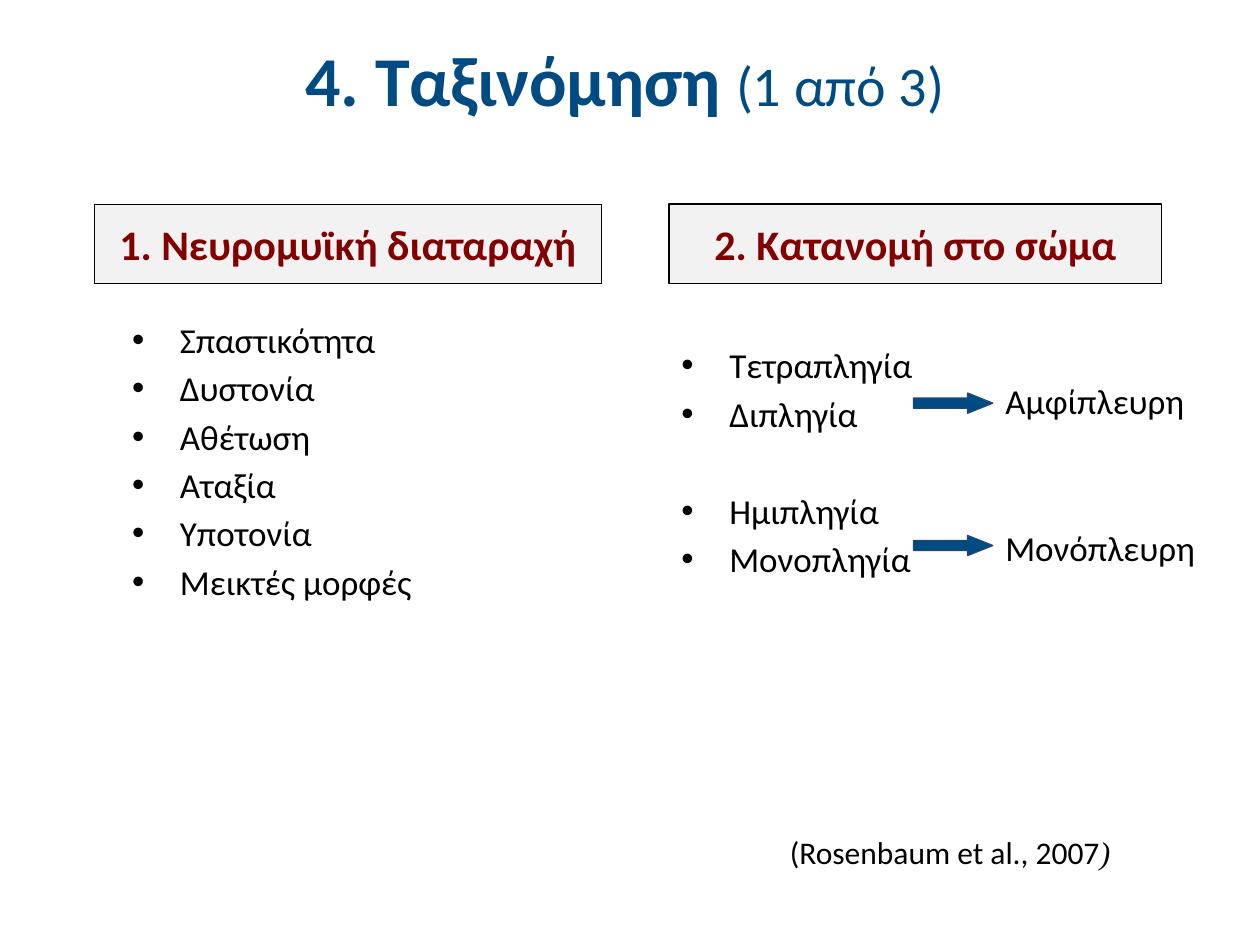
from lxml import etree
from pptx import Presentation
from pptx.dml.color import RGBColor
from pptx.enum.shapes import MSO_SHAPE
from pptx.enum.text import MSO_ANCHOR, MSO_AUTO_SIZE, PP_ALIGN
from pptx.oxml.ns import qn
from pptx.util import Inches, Pt

RECT, ARROW = MSO_SHAPE.RECTANGLE, MSO_SHAPE.RIGHT_ARROW
MIDDLE, CENTER = MSO_ANCHOR.MIDDLE, PP_ALIGN.CENTER
FIXED, GROW = MSO_AUTO_SIZE.NONE, MSO_AUTO_SIZE.SHAPE_TO_FIT_TEXT
TITLE_ONLY = 5
COLS, ROWS = 100, 75
NAVY, RED, BLACK, GREY, EDGE = "004B82", "820000", "000000", "F2F2F2", "1F497D"
LEAD = 3.6  # points before each list item
INDENT = Inches(0.38)


def color(text):
    return RGBColor.from_string(text)


class Deck:
    def __init__(self):
        self.face = "Calibri"
        self.prs = Presentation()
        self.prs.slide_width, self.prs.slide_height = Inches(10), Inches(7.5)
        self.slide = self.prs.slides.add_slide(self.prs.slide_layouts[TITLE_ONLY])

    def place(self, col, row, wide, high):
        """Turn grid columns and rows into slide lengths."""
        x, y = self.prs.slide_width / COLS, self.prs.slide_height / ROWS
        return [round(n) for n in (col * x, row * y, wide * x, high * y)]

    def style(self, font, size, ink=BLACK, bold=False):
        font.name, font.size, font.bold = self.face, Pt(size), bold
        font.color.rgb = color(ink)

    def title(self, grid, main, part):
        shape = self.slide.shapes.title
        shape.left, shape.top, shape.width, shape.height = self.place(*grid)
        frame = shape.text_frame
        frame.auto_size, frame.vertical_anchor = FIXED, MIDDLE
        para = frame.paragraphs[0]
        para.alignment = CENTER
        for text, size, bold in ((main, 40, True), (part, 32, False)):
            run = para.add_run()
            run.text = text
            self.style(run.font, size, NAVY, bold)

    def shape(self, kind, grid, fill, line, width):
        shape = self.slide.shapes.add_shape(kind, *self.place(*grid))
        shape.shadow.inherit = False
        shape.fill.solid()
        shape.fill.fore_color.rgb = color(fill)
        shape.line.color.rgb = color(line)
        shape.line.width = Pt(width)
        return shape

    def header(self, grid, text, width):
        frame = self.shape(RECT, grid, GREY, BLACK, width).text_frame
        frame.word_wrap, frame.vertical_anchor = False, MIDDLE
        para = frame.paragraphs[0]
        para.text, para.alignment = text, CENTER
        self.style(para.font, 24, RED, True)

    def arrow(self, col, row):
        arrow = self.shape(ARROW, (col, row, 6.3, 1.6), NAVY, EDGE, 0.75)
        arrow.adjustments[0], arrow.adjustments[1] = 0.5, 1.25

    def text(self, grid, items, size=20, wrap=True, fit=GROW):
        """Add a box of (text, points before) pairs; return its frame."""
        frame = self.slide.shapes.add_textbox(*self.place(*grid)).text_frame
        frame.word_wrap, frame.auto_size = wrap, fit
        for i, (text, gap) in enumerate(items):
            para = frame.add_paragraph() if i else frame.paragraphs[0]
            para.text, para.space_before = text, Pt(gap)
            self.style(para.font, size)
        return frame

    def bullets(self, grid, items):
        for para in self.text(grid, items, fit=FIXED).paragraphs:
            props = para._p.get_or_add_pPr()
            props.set("marL", str(INDENT))
            props.set("indent", str(-INDENT))
            mark = etree.Element(qn("a:buChar"), char="•")
            face = etree.Element(qn("a:buFont"), typeface="Arial")
            # Bullet parts stand before the default run style
            props.find(qn("a:defRPr")).addprevious(face)
            face.addnext(mark)


def main():
    deck = Deck()
    deck.title((5.1, 1.3, 90, 9.9), "4. Ταξινόμηση ", "(1 από 3) ")
    deck.header((53.1, 16.2, 39.1, 6.3), "2. Κατανομή στο σώμα", 0.75)
    deck.header((7.5, 16.2, 40.2, 6.3), "1. Νευρομυϊκή διαταραχή", 0.25)

    sides = deck.text((78.8, 26.2, 20.1, 24.6),
                      [("Αμφίπλευρη", 0), ("Μονόπλευρη", 60)], fit=FIXED)
    sides.margin_top = Inches(0.39)
    for row in (31.2, 42.5):
        deck.arrow(72.5, row)

    cite = deck.text((61.7, 65.6, 28.1, 4),
                     [("(Rosenbaum et al., 2007", 0)], 18, wrap=False)
    close = cite.paragraphs[0].add_run()
    close.text = ")"
    close.font.name, close.font.italic = "Times New Roman", True

    signs = ("Σπαστικότητα", "Δυστονία", "Αθέτωση",
             "Αταξία", "Υποτονία", "Μεικτές μορφές")
    deck.bullets((9.5, 24.8, 32.3, 30),
                 [(sign, LEAD if i else 0) for i, sign in enumerate(signs)])
    deck.bullets((53.1, 26.8, 27.4, 20.7),
                 [("Τετραπληγία", 0), ("Διπληγία", LEAD),
                  ("Ημιπληγία", 28 + LEAD), ("Μονοπληγία", LEAD)])
    deck.prs.save("out.pptx")


if __name__ == "__main__":
    main()
